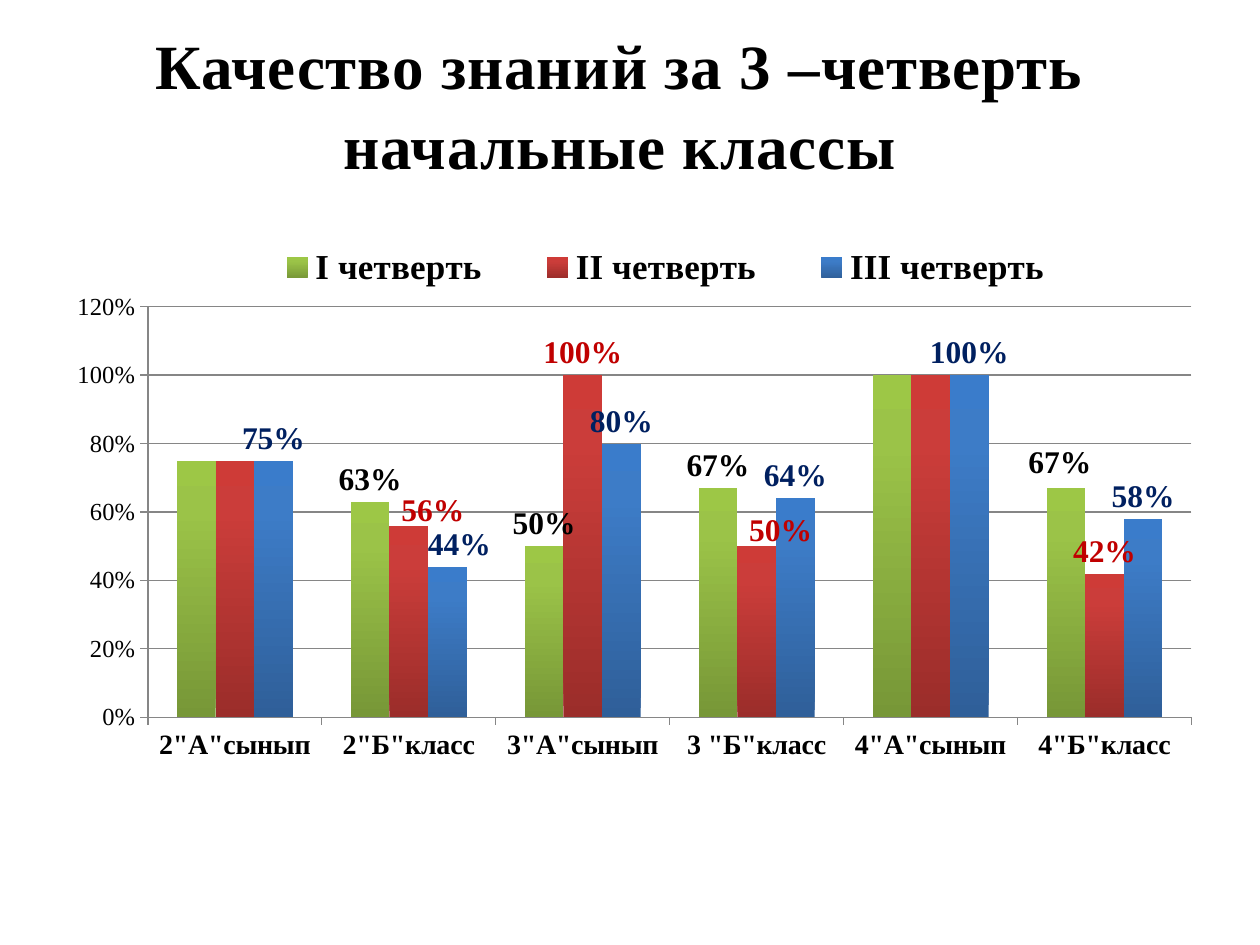
from copy import deepcopy
from lxml import etree
from pptx import Presentation
from pptx.chart.data import CategoryChartData
from pptx.dml.color import RGBColor
from pptx.enum.chart import XL_CHART_TYPE, XL_LABEL_POSITION, XL_LEGEND_POSITION, XL_TICK_MARK
from pptx.enum.text import MSO_ANCHOR, PP_ALIGN
from pptx.oxml.ns import qn
from pptx.util import Pt

PX = 914400 // 126
COLUMNS = XL_CHART_TYPE.COLUMN_CLUSTERED
OUT_END = XL_LABEL_POSITION.OUTSIDE_END
RIGHT = XL_LEGEND_POSITION.RIGHT
TICK_OUT = XL_TICK_MARK.OUTSIDE
CENTER = PP_ALIGN.CENTER
MIDDLE = MSO_ANCHOR.MIDDLE
SERIF = "Times New Roman"
BLACK = RGBColor(0, 0, 0)
GRAY = RGBColor(0x86, 0x86, 0x86)
DARK_RED = RGBColor(0xC0, 0, 0)
NAVY = RGBColor(0, 0x20, 0x60)
GREENS = [RGBColor(0x77, 0x97, 0x37), RGBColor(0x9B, 0xC3, 0x48), RGBColor(0x9D, 0xC7, 0x46)]
REDS = [RGBColor(0x9B, 0x2D, 0x2A), RGBColor(0xCB, 0x3D, 0x3A), RGBColor(0xCE, 0x3B, 0x37)]
BLUES = [RGBColor(0x2F, 0x5F, 0x99), RGBColor(0x3D, 0x7C, 0xC7), RGBColor(0x3A, 0x7C, 0xCB)]
STOPS = [0, 0.8, 1]


def style(font, size, bold=False, color=BLACK):
    font.name, font.size, font.bold = SERIF, Pt(size), bold
    font.color.rgb = color


def place(parent, index, **values):
    """Give a chart part a manual layout."""
    for old in parent.findall(qn("c:layout")):
        parent.remove(old)
    layout = etree.Element(qn("c:layout"))
    manual = etree.SubElement(layout, qn("c:manualLayout"))
    for tag, value in values.items():
        etree.SubElement(manual, qn("c:" + tag)).set("val", str(value))
    parent.insert(index, layout)


deck = Presentation()
deck.slide_width, deck.slide_height = 1260 * PX, 945 * PX
slide = deck.slides.add_slide(deck.slide_layouts[5])

# Title
title = slide.shapes.title
title.left, title.top, title.width, title.height = [n * PX for n in (49, 20, 1142, 165)]
frame = title.text_frame
frame.text = "Качество знаний за 3 –четверть\vначальные классы"
frame.vertical_anchor = MIDDLE
para = frame.paragraphs[0]
para.alignment = CENTER
para.line_spacing = 1.05
for run in para.runs:
    style(run.font, 36, True)
    run.font._element.set("spc", "50")

# Chart data: name, values, bar colours, label colour, hidden labels, label shifts
quarters = [
    ("I четверть", (0.75, 0.63, 0.5, 0.67, 1, 0.67), GREENS, BLACK,
     (0, 4), {5: (-0.005, -0.005)}),
    ("II четверть", (0.75, 0.56, 1, 0.5, 1, 0.42), REDS, DARK_RED,
     (0, 4), {1: (0.02, 0.01), 3: (0.02, 0.01)}),
    ("III четверть", (0.75, 0.44, 0.8, 0.64, 1, 0.58), BLUES, NAVY,
     (), {1: (0.01, 0)}),
]
data = CategoryChartData(number_format="0%")
data.categories = ['2"А"сынып', '2"Б"класс', '3"А"сынып',
                   '3 "Б"класс', '4"А"сынып', '4"Б"класс']
for name, values, *rest in quarters:
    data.add_series(name, values)

box = [n * PX for n in (29, 217, 1201, 680)]
chart = slide.shapes.add_chart(COLUMNS, *box, data).chart
chart.has_title = False
chart.font.name, chart.font.size = "Calibri", Pt(18)
chart.font.color.rgb = BLACK
plot = chart.plots[0]
plot.gap_width, plot.overlap, plot.vary_by_categories = 150, 0, False
place(chart._chartSpace.chart.plotArea, 0, layoutTarget="inner", xMode="edge",
      yMode="edge", x=0.099, y=0.132, w=0.869, h=0.604)

# Axes
across, up = chart.category_axis, chart.value_axis
style(across.tick_labels.font, 16, True)
style(up.tick_labels.font, 14)
up.minimum_scale, up.maximum_scale, up.major_unit = 0, 1.2, 0.2
up.tick_labels.number_format = "0%"
up.tick_labels.number_format_is_linked = False
up.has_major_gridlines = True
for axis in (across, up):
    axis.major_tick_mark = TICK_OUT
for part in (across, up, up.major_gridlines):
    part.format.line.color.rgb = GRAY
    part.format.line.width = Pt(0.75)

# Legend
chart.has_legend = True
legend = chart.legend
legend.position = RIGHT
legend.include_in_layout = False
style(legend.font, 20, True)
place(legend._element, 1, xMode="edge", yMode="edge", x=0.17, y=0.04, w=0.72, h=0.07)

# Bars and their labels
for series, (name, values, shades, ink, hidden, shifts) in zip(plot.series, quarters):
    fill = series.format.fill
    fill.gradient()
    fill.gradient_angle = 90
    stops = series._element.find(".//" + qn("a:gsLst"))
    stops.append(deepcopy(stops[-1]))
    for stop, spot, shade in zip(fill.gradient_stops, STOPS, shades):
        stop.position = spot
        stop.color.rgb = shade

    labels = series.data_labels
    labels.show_value = True
    labels.number_format, labels.number_format_is_linked = "0%", False
    labels.position = OUT_END
    style(labels.font, 18, True, ink)
    group = labels._element
    common = [node for node in group if node.tag != qn("c:showLeaderLines")]
    for order, point in enumerate(sorted([*hidden, *shifts])):
        label = etree.Element(qn("c:dLbl"))
        etree.SubElement(label, qn("c:idx")).set("val", str(point))
        if point in hidden:
            etree.SubElement(label, qn("c:delete")).set("val", "1")
        else:
            right, down = shifts[point]
            place(label, 1, x=right, y=down)
            label.extend(deepcopy(common))
        group.insert(order, label)

deck.save("out.pptx")
